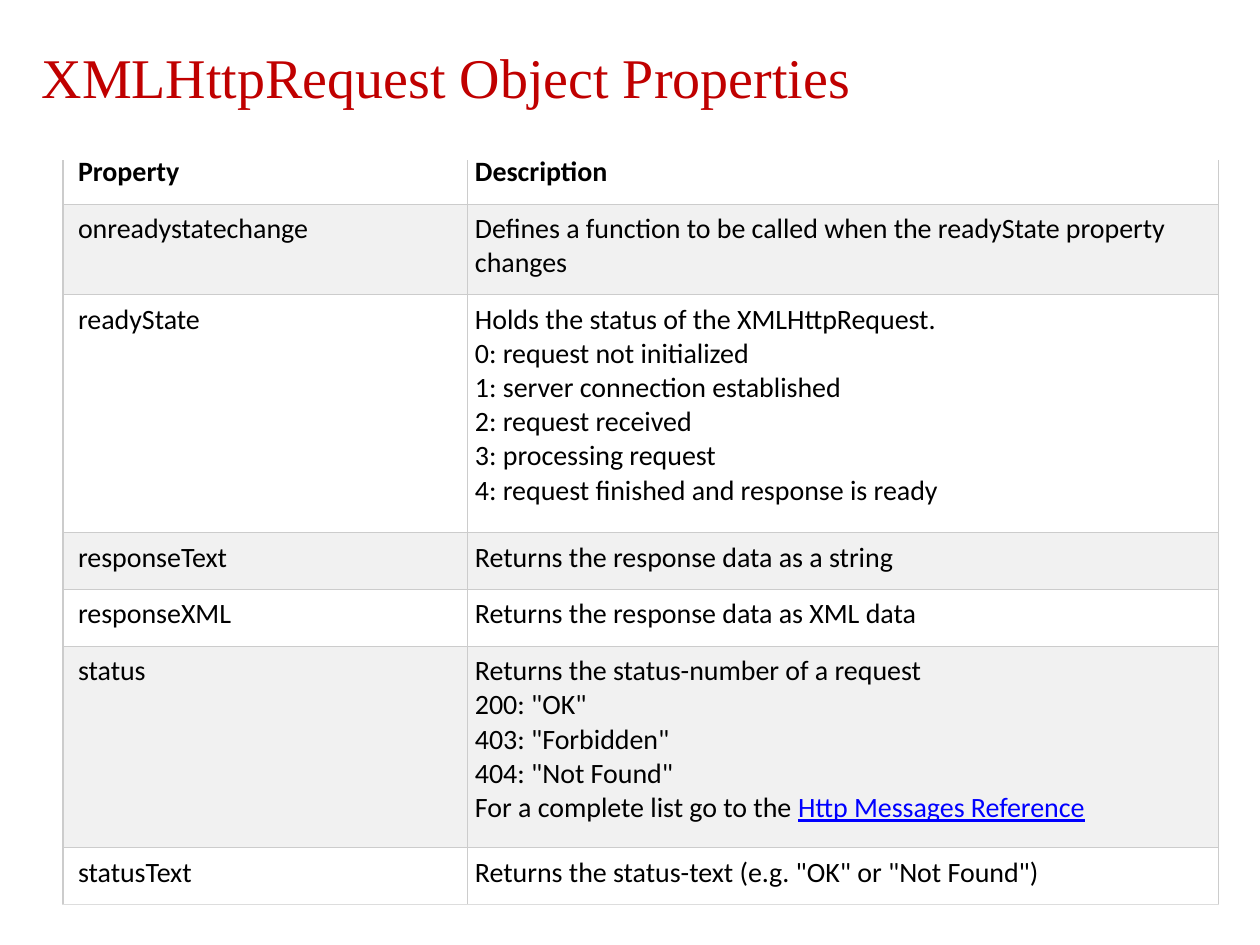
"""Build the XMLHttpRequest properties slide."""
from lxml.etree import SubElement
from pptx import Presentation
from pptx.dml.color import RGBColor
from pptx.enum.text import MSO_ANCHOR, PP_ALIGN
from pptx.oxml.ns import qn
from pptx.util import Inches, Pt

TITLE = "XMLHttpRequest Object Properties"
LINK = "Http Messages Reference"
ROWS = [
    (0.45, "Property", ["Description"]),
    (0.72, "onreadystatechange",
     ["Defines a function to be called when the readyState property changes"]),
    (1.89, "readyState",
     ["Holds the status of the XMLHttpRequest.",
      "0: request not initialized",
      "1: server connection established",
      "2: request received",
      "3: processing request",
      "4: request finished and response is ready"]),
    (0.45, "responseText", ["Returns the response data as a string"]),
    (0.45, "responseXML", ["Returns the response data as XML data"]),
    (1.6, "status",
     ["Returns the status-number of a request",
      '200: "OK"',
      '403: "Forbidden"',
      '404: "Not Found"',
      "For a complete list go to the "]),
    (0.45, "statusText", ['Returns the status-text (e.g. "OK" or "Not Found")']),
]
COL_WIDTHS = (3.21, 5.96)
LEFT_INSETS = (0.12, 0.06)


def rgb(value):
    return RGBColor.from_string(value)


def style_run(r, font, size, color, bold=False):
    r.font.name = font
    r.font.size = Pt(size)
    r.font.bold = bold
    r.font.color.rgb = rgb(color)


def add_borders(cell, bottom):
    tc_pr = cell._tc.get_or_add_tcPr()
    for side in "LRTB":
        ln = SubElement(tc_pr, qn(f"a:ln{side}"), w=str(Pt(0.75)))
        fill = SubElement(ln, qn("a:solidFill"))
        SubElement(fill, qn("a:srgbClr"), val=bottom if side == "B" else "CCCCCC")


def fill_cell(cell, lines, left, row):
    cell.margin_left = Inches(left)
    cell.margin_right = cell.margin_top = cell.margin_bottom = Inches(0.06)
    add_borders(cell, "DDDDDD" if row == len(ROWS) - 1 else "CCCCCC")
    cell.fill.solid()
    cell.fill.fore_color.rgb = rgb("F1F1F1" if row % 2 else "FFFFFF")
    cell.text_frame.text = "\n".join(lines)
    for p in cell.text_frame.paragraphs:
        for r in p.runs:
            style_run(r, "Calibri", 16, "000000", bold=row == 0)


def add_properties(s):
    heights = [height for height, _, _ in ROWS]
    frame = s.shapes.add_table(len(ROWS), len(COL_WIDTHS), Inches(0.5), Inches(1.17),
                               Inches(sum(COL_WIDTHS)), Inches(sum(heights)))
    table = frame.table
    for column, width in zip(table.columns, COL_WIDTHS):
        column.width = Inches(width)
    for i, (height, name, description) in enumerate(ROWS):
        table.rows[i].height = Inches(height)
        for j, lines in enumerate(([name], description)):
            fill_cell(table.cell(i, j), lines, LEFT_INSETS[j], i)
        if name == "status":
            r = table.cell(i, 1).text_frame.paragraphs[-1].add_run()
            r.text = LINK
            style_run(r, "Calibri", 16, "0000FF")
            r.font.underline = True


def add_title(s):
    sp = s.shapes.title
    sp.left, sp.top, sp.width, sp.height = map(Inches, (0.33, 0.23, 9.67, 1.04))
    sp.fill.solid()
    sp.fill.fore_color.rgb = rgb("FFFFFF")
    tf = sp.text_frame
    tf.text = TITLE
    tf.word_wrap = True
    tf.vertical_anchor = MSO_ANCHOR.MIDDLE
    tf.margin_left = tf.margin_right = 0
    tf.margin_top, tf.margin_bottom = Inches(0.1), Inches(0.39)
    p = tf.paragraphs[0]
    p.alignment = PP_ALIGN.LEFT
    style_run(p.runs[0], "Times New Roman", 32, "C00000")
    s.shapes._spTree.append(sp._element)


def main():
    prs = Presentation()
    prs.slide_width, prs.slide_height = Inches(10), Inches(7.5)
    s = prs.slides.add_slide(prs.slide_layouts[5])
    add_properties(s)
    add_title(s)
    prs.save("out.pptx")


if __name__ == "__main__":
    main()
